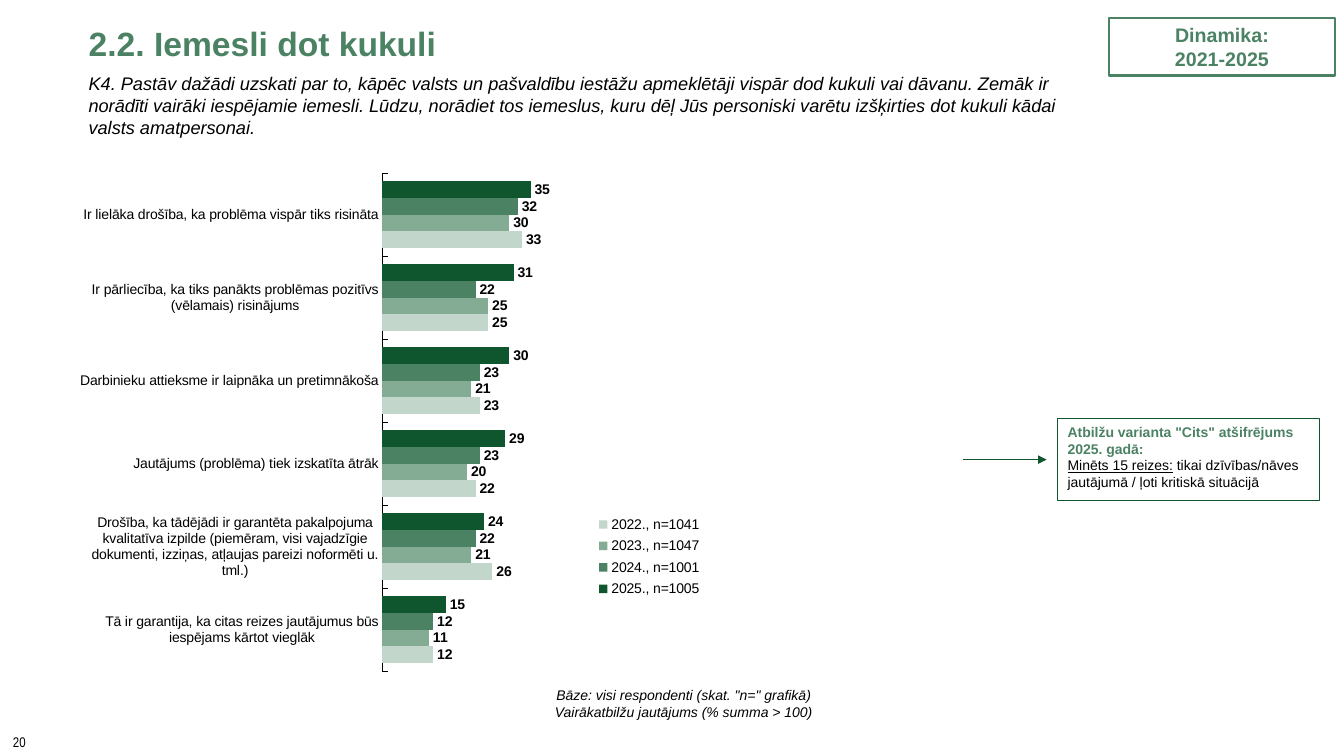
"""Build the slide on reasons for giving a bribe."""
from lxml import etree
from pptx import Presentation
from pptx.chart import data
from pptx.dml.color import RGBColor
from pptx.enum import chart as kinds, shapes, text
from pptx.oxml import ns
from pptx.util import Inches, Pt

BLACK = RGBColor(0, 0, 0)
DARK = RGBColor(0x0F, 0x55, 0x2E)
GREEN = RGBColor(0x4C, 0x82, 0x64)
SAGE = RGBColor(0x84, 0xAC, 0x94)
PALE = RGBColor(0xC3, 0xD6, 0xCC)

QUESTION = (
    "K4. Pastāv dažādi uzskati par to, kāpēc valsts un pašvaldību iestāžu apmeklētāji "
    "vispār dod kukuli vai dāvanu. Zemāk ir norādīti vairāki iespējamie iemesli. Lūdzu, "
    "norādiet tos iemeslus, kuru dēļ Jūs personiski varētu izšķirties dot kukuli kādai "
    "valsts amatpersonai."
)
REASONS = [
    "Ir lielāka drošība, ka problēma vispār tiks risināta",
    "Ir pārliecība, ka tiks panākts problēmas pozitīvs (vēlamais) risinājums",
    "Darbinieku attieksme ir laipnāka un pretimnākoša",
    "Jautājums (problēma) tiek izskatīta ātrāk",
    "Drošība, ka tādējādi ir garantēta pakalpojuma kvalitatīva izpilde (piemēram, visi "
    "vajadzīgie dokumenti, izziņas, atļaujas pareizi noformēti u. tml.)",
    "Tā ir garantija, ka citas reizes jautājumus būs iespējams kārtot vieglāk",
]
YEARS = [
    ("2025., n=1005", DARK, (35, 31, 30, 29, 24, 15)),
    ("2024., n=1001", GREEN, (32, 22, 23, 23, 22, 12)),
    ("2023., n=1047", SAGE, (30, 25, 21, 20, 21, 11)),
    ("2022., n=1041", PALE, (33, 25, 23, 22, 26, 12)),
]


def style(font, size=10, color=BLACK, name="Arial", bold=False, italic=False, under=False):
    """Format a font."""
    font.size, font.name, font.bold, font.italic = Pt(size), name, bold, italic
    font.underline = under
    font.color.rgb = color


def write(par, words, **form):
    """Add a formatted run to a paragraph."""
    run = par.add_run()
    run.text = words
    style(run.font, **form)


def fill(frame, lines, align=text.PP_ALIGN.LEFT, anchor=text.MSO_ANCHOR.TOP, **form):
    """Write lines, each a list of (words, own format) runs or a plain string."""
    frame.word_wrap = True
    frame.vertical_anchor = anchor
    for i, line in enumerate(lines):
        par = frame.add_paragraph() if i else frame.paragraphs[0]
        par.alignment = align
        for words, own in [(line, {})] if isinstance(line, str) else line:
            write(par, words, **{**form, **own})


def note(slide, box, lines, **form):
    """Place a text box."""
    fill(slide.shapes.add_textbox(*map(Inches, box)).text_frame, lines, **form)


def frame(slide, box, lines, edge, width, **form):
    """Place an outlined rectangle with text."""
    rect = slide.shapes.add_shape(shapes.MSO_SHAPE.RECTANGLE, *map(Inches, box))
    rect.shadow.inherit = False
    rect.fill.background()
    rect.line.color.rgb, rect.line.width = edge, Pt(width)
    fill(rect.text_frame, lines, **form)


def head(slide, box):
    """Place the title, the question and the period badge."""
    left, top, width, height = box
    title = slide.shapes.title
    title.left, title.top, title.width, title.height = map(Inches, box)
    fill(title.text_frame, ["2.2. Iemesli dot kukuli"], anchor=text.MSO_ANCHOR.MIDDLE,
         size=24, color=GREEN, bold=True)
    title.text_frame.paragraphs[0].line_spacing = 0.8
    note(slide, (left, top + 0.64, width, 0.76), [QUESTION], size=13, italic=True)
    frame(slide, (left + width, top + 0.15, 2.24, 0.57), ["Dinamika:", "2021-2025"], GREEN, 1.5,
          align=text.PP_ALIGN.CENTER, anchor=text.MSO_ANCHOR.MIDDLE,
          size=14, color=GREEN, bold=True)


def layout(place, box, inner=False):
    """Make a manual chart layout from fractions of the chart."""
    root = etree.Element(ns.qn("c:layout"))
    man = etree.SubElement(root, ns.qn("c:manualLayout"))
    parts = [("layoutTarget", "inner")] if inner else []
    parts += [("xMode", "edge"), ("yMode", "edge"), *zip("xywh", map(str, box))]
    for tag, val in parts:
        etree.SubElement(man, ns.qn("c:" + tag)).set("val", val)
    for old in place.findall(ns.qn("c:layout")):
        place.remove(old)
    place.insert(0 if inner else 1, root)


def bars(slide, box):
    """Place the bar chart of reasons by year."""
    table = data.CategoryChartData(number_format="0")
    table.categories = REASONS
    for name, _, vals in YEARS:
        table.add_series(name, vals)
    chart = slide.shapes.add_chart(
        kinds.XL_CHART_TYPE.BAR_CLUSTERED, *map(Inches, box), table).chart
    style(chart.font, name="Calibri")
    chart.has_title = False
    plot = chart.plots[0]
    plot.gap_width, plot.overlap, plot.vary_by_categories = 100, 0, False
    for series, (_, color, _) in zip(plot.series, YEARS):
        series.format.fill.solid()
        series.format.fill.fore_color.rgb = color
        tags = series.data_labels
        tags.show_value = True
        tags.number_format, tags.number_format_is_linked = "0", False
        tags.position = kinds.XL_LABEL_POSITION.OUTSIDE_END
        style(tags.font, bold=True)
    axis = chart.category_axis
    axis.reverse_order = True
    axis.major_tick_mark = kinds.XL_TICK_MARK.INSIDE
    axis.format.line.color.rgb, axis.format.line.width = BLACK, Pt(0.25)
    style(axis.tick_labels.font)
    scale = chart.value_axis
    scale.minimum_scale, scale.maximum_scale = 0, 70
    scale.has_major_gridlines = scale.visible = False
    chart.has_legend = True
    key = chart.legend
    key.position, key.include_in_layout = kinds.XL_LEGEND_POSITION.RIGHT, False
    style(key.font)
    area = chart.element.find(".//" + ns.qn("c:plotArea"))
    layout(area, (0.41, 0.1, 0.4, 0.87), inner=True)
    layout(chart.element.find(".//" + ns.qn("c:legend")), (0.68, 0.69, 0.18, 0.16))


def aside(slide, box):
    """Place the note on other answers and the arrow to it."""
    left, top, _, height = box
    frame(slide, box, [
        [("Atbilžu varianta \"Cits\" atšifrējums 2025. gadā:", {"color": GREEN, "bold": True})],
        [("Minēts 15 reizes:", {"under": True}),
         (" tikai dzīvības/nāves jautājumā / ļoti kritiskā situācijā", {})],
    ], DARK, 0.75)
    mid = Inches(top + height / 2)
    arrow = slide.shapes.add_connector(
        shapes.MSO_CONNECTOR.STRAIGHT, Inches(left - 0.94), mid, Inches(left - 0.11), mid)
    arrow.line.color.rgb, arrow.line.width = DARK, Pt(1)
    etree.SubElement(arrow.line._get_or_add_ln(), ns.qn("a:tailEnd")).set("type", "triangle")
    etree.SubElement(arrow._element.spPr, ns.qn("a:effectLst"))


def foot(slide, box):
    """Place the base note and the page number."""
    left, top, width, height = box
    note(slide, (left + 5.17, top, 3.16, 0.44),
         ["Bāze: visi respondenti (skat. \"n=\" grafikā)", "Vairākatbilžu jautājums (% summa > 100)"],
         align=text.PP_ALIGN.CENTER, anchor=text.MSO_ANCHOR.MIDDLE, italic=True)
    note(slide, (left, top + height - 0.27, 1.47, 0.27), ["20"], name="Arial Narrow")


def main():
    """Build and save the deck."""
    deck = Presentation()
    deck.slide_width, deck.slide_height = Inches(13.33), Inches(7.5)
    slide = deck.slides.add_slide(deck.slide_layouts[5])
    head(slide, (0.78, 0.03, 10.22, 0.87))
    bars(slide, (0.78, 1.15, 7.35, 5.68))
    aside(slide, (10.49, 4.15, 2.6, 0.82))
    foot(slide, (0.03, 6.76, 13.3, 0.74))
    deck.save("out.pptx")


if __name__ == "__main__":
    main()
